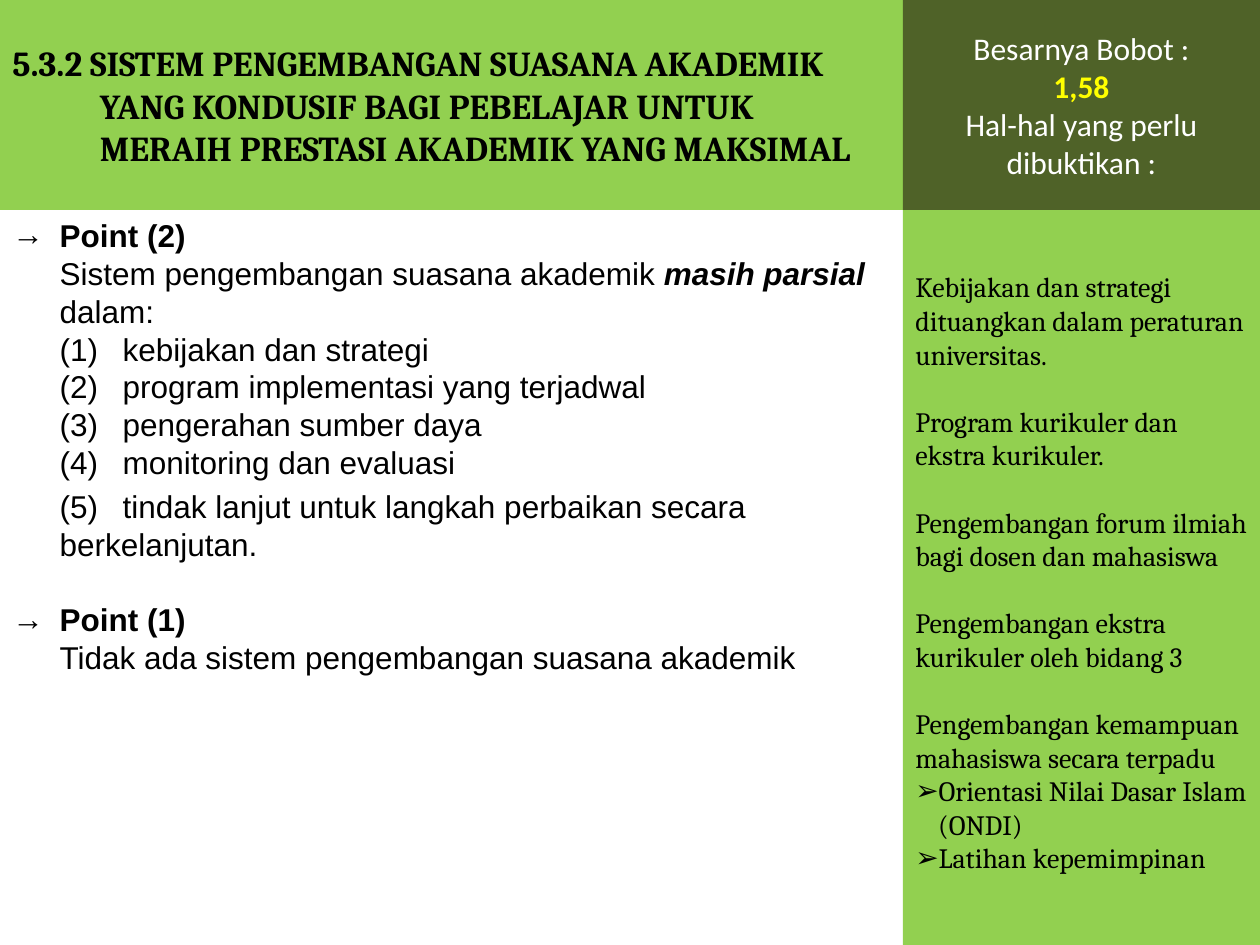
import pptx
import pptx.dml.color
import pptx.enum.shapes
import pptx.enum.text
import pptx.oxml.ns
import pptx.util
from lxml import etree

Pt = pptx.util.Pt
ALIGN = pptx.enum.text.PP_ALIGN
ANCHOR = pptx.enum.text.MSO_ANCHOR
COLORS = {"green": "92D050", "olive": "4F6228", "black": "000000",
          "white": "FFFFFF", "yellow": "FFFF00"}

TITLE = ("5.3.2 SISTEM PENGEMBANGAN SUASANA AKADEMIK YANG KONDUSIF BAGI "
         "PEBELAJAR UNTUK MERAIH PRESTASI AKADEMIK YANG MAKSIMAL")
WEIGHT_LABEL, WEIGHT = "Besarnya Bobot :", "1,58"
EVIDENCE_LABEL = "Hal-hal yang perlu dibuktikan :"
EVIDENCE = [
    "Kebijakan dan strategi dituangkan dalam peraturan universitas.",
    "Program kurikuler dan ekstra kurikuler.",
    "Pengembangan forum ilmiah bagi dosen dan mahasiswa",
    "Pengembangan ekstra kurikuler oleh bidang 3",
    "Pengembangan kemampuan mahasiswa secara terpadu",
]
PROGRAMS = ["Orientasi Nilai Dasar Islam (ONDI)", "Latihan kepemimpinan"]
PARTIAL = [("Sistem pengembangan suasana akademik ", {}),
           ("masih parsial", {"bold": True, "italic": True}),
           (" dalam:", {})]
ASPECTS = [
    "kebijakan dan strategi",
    "program implementasi yang terjadwal",
    "pengerahan sumber daya",
    "monitoring dan evaluasi",
    "tindak lanjut untuk langkah perbaikan secara berkelanjutan.",
]
NO_SYSTEM = "Tidak ada sistem pengembangan suasana akademik"

SLIDE_WIDTH, SLIDE_HEIGHT = 720, 540
SPLIT, HEADER_HEIGHT = 516, 120
SIDE_TOP, BODY_WIDTH = 114, 522
BODY_INDENT, ASPECT_TAB = 27, 64


def add_panel(slide, left, top, width, height, fill):
    panel = slide.shapes.add_shape(pptx.enum.shapes.MSO_SHAPE.RECTANGLE,
                                   Pt(left), Pt(top), Pt(width), Pt(height))
    panel.shadow.inherit = False
    panel.fill.solid()
    panel.fill.fore_color.rgb = pptx.dml.color.RGBColor.from_string(COLORS[fill])
    panel.line.fill.background()
    panel.text_frame.word_wrap = True
    panel.text_frame.vertical_anchor = ANCHOR.MIDDLE
    return panel.text_frame


def add_text(frame, text, *, font, size, color="black", bold=False, align=ALIGN.LEFT,
             margin=0, hanging=0, bullet=None, tab=None, before=0, line=None):
    """Add a paragraph; text is a string or a list of (string, font settings)."""
    paragraph = frame.paragraphs[0]
    if paragraph.runs:
        paragraph = frame.add_paragraph()
    paragraph.alignment = align
    paragraph.space_before = Pt(before)
    if line:
        paragraph.line_spacing = Pt(line)
    properties = paragraph._p.get_or_add_pPr()
    properties.set("marL", str(Pt(margin)))
    properties.set("indent", str(Pt(-hanging)))
    qn = pptx.oxml.ns.qn
    if bullet:
        etree.SubElement(properties, qn("a:buFont"), typeface="Arial")
        etree.SubElement(properties, qn("a:buChar"), char=bullet)
    if tab:
        tabs = etree.SubElement(properties, qn("a:tabLst"))
        etree.SubElement(tabs, qn("a:tab"), pos=str(Pt(tab)), algn="l")
    for words, settings in [(text, {})] if isinstance(text, str) else text:
        run = paragraph.add_run()
        run.text = words
        run.font.name, run.font.size = font, Pt(size)
        run.font.color.rgb = pptx.dml.color.RGBColor.from_string(COLORS[color])
        run.font.bold = settings.get("bold", bold)
        run.font.italic = settings.get("italic", False)


def add_body(slide):
    box = slide.shapes.add_textbox(Pt(0), Pt(HEADER_HEIGHT), Pt(BODY_WIDTH),
                                   Pt(SLIDE_HEIGHT - HEADER_HEIGHT))
    frame = box.text_frame
    frame.word_wrap = True
    style = {"font": "Arial", "size": 18, "margin": BODY_INDENT, "line": 21.6}
    heading = {**style, "bold": True, "hanging": BODY_INDENT, "bullet": "→"}
    add_text(frame, "Point (2)", **heading)
    add_text(frame, PARTIAL, **style)
    for number, aspect in enumerate(ASPECTS, 1):
        add_text(frame, f"({number})\t{aspect}", tab=ASPECT_TAB,
                 before=3.6 if number == len(ASPECTS) else 0, **style)
    add_text(frame, "Point (1)", before=21.6, **heading)
    add_text(frame, NO_SYSTEM, **style)


def main():
    presentation = pptx.Presentation()
    presentation.slide_width, presentation.slide_height = Pt(SLIDE_WIDTH), Pt(SLIDE_HEIGHT)
    slide = presentation.slides.add_slide(presentation.slide_layouts[6])
    side_width = SLIDE_WIDTH - SPLIT

    add_body(slide)

    title = add_panel(slide, 0, 0, SPLIT, HEADER_HEIGHT, "green")
    add_text(title, TITLE, font="Cambria", size=20, bold=True, margin=50, hanging=50)

    side = add_panel(slide, SPLIT, SIDE_TOP, side_width, SLIDE_HEIGHT - SIDE_TOP, "green")
    style = {"font": "Cambria", "size": 16}
    for index, item in enumerate(EVIDENCE):
        add_text(side, item, before=19.2 if index else 0, **style)
    for program in PROGRAMS:
        add_text(side, program, margin=13, hanging=13, bullet="➢", **style)

    weight = add_panel(slide, SPLIT, 0, side_width, HEADER_HEIGHT, "olive")
    style = {"font": "Calibri", "size": 18, "align": ALIGN.CENTER}
    add_text(weight, WEIGHT_LABEL, color="white", **style)
    add_text(weight, WEIGHT, color="yellow", bold=True, **style)
    add_text(weight, EVIDENCE_LABEL, color="white", **style)

    presentation.save("out.pptx")


if __name__ == "__main__":
    main()
